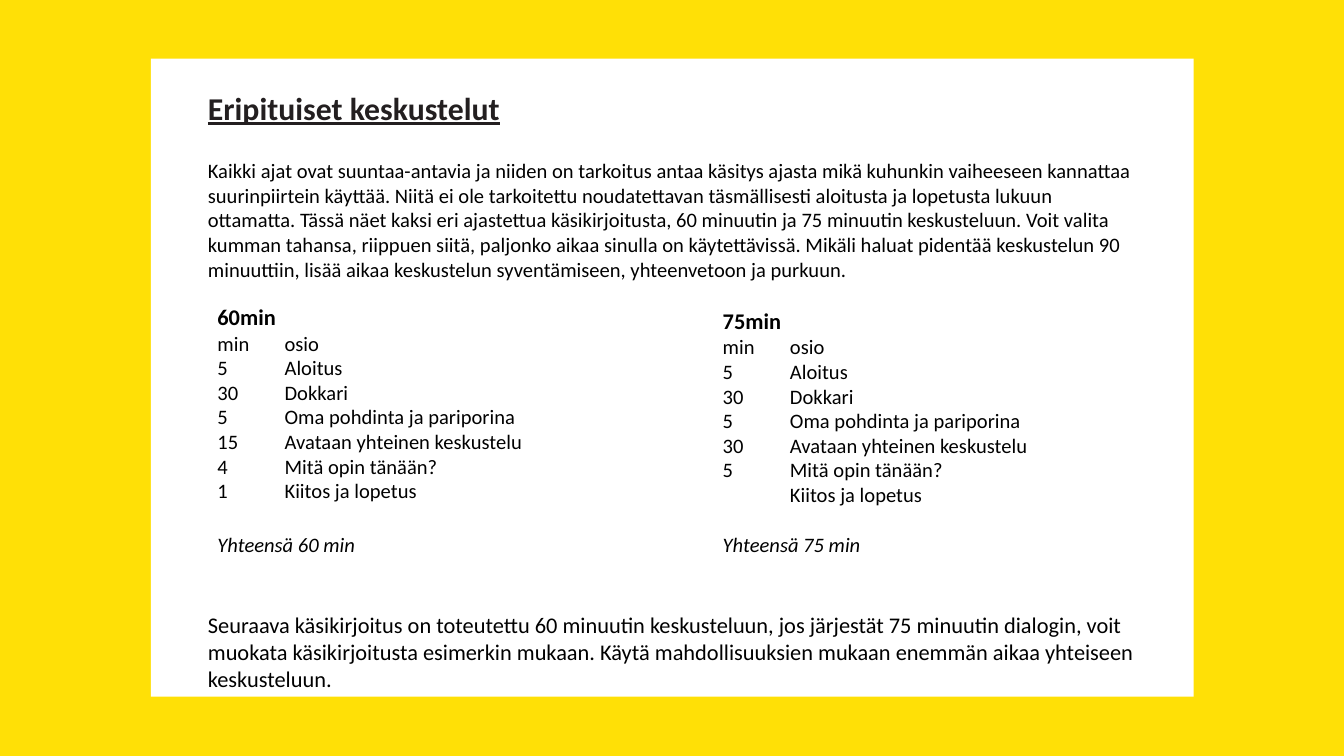
from pptx import Presentation
from pptx.dml.color import RGBColor
from pptx.enum.shapes import MSO_SHAPE
from pptx.util import Cm, Pt

YELLOW = RGBColor(0xFF, 0xE0, 0x06)
WHITE = RGBColor(0xFF, 0xFF, 0xFF)
BLACK = RGBColor(0x00, 0x00, 0x00)
CHARCOAL = RGBColor(0x23, 0x1F, 0x20)
FONT = "Calibri"

TITLE = "Eripituiset keskustelut"
INTRO = (
    "Kaikki ajat ovat suuntaa-antavia ja niiden on tarkoitus antaa käsitys ajasta "
    "mikä kuhunkin vaiheeseen kannattaa suurinpiirtein käyttää. Niitä ei ole "
    "tarkoitettu noudatettavan täsmällisesti aloitusta ja lopetusta lukuun ottamatta. "
    "Tässä näet kaksi eri ajastettua käsikirjoitusta, 60 minuutin ja 75 minuutin "
    "keskusteluun. Voit valita kumman tahansa, riippuen siitä, paljonko aikaa sinulla "
    "on käytettävissä. Mikäli haluat pidentää keskustelun 90 minuuttiin, lisää aikaa "
    "keskustelun syventämiseen, yhteenvetoon ja purkuun."
)
CLOSING = (
    "Seuraava käsikirjoitus on toteutettu 60 minuutin keskusteluun, jos järjestät "
    "75 minuutin dialogin, voit muokata käsikirjoitusta esimerkin mukaan. Käytä "
    "mahdollisuuksien mukaan enemmän aikaa yhteiseen keskusteluun."
)
SECTIONS = [
    "Aloitus",
    "Dokkari",
    "Oma pohdinta ja pariporina",
    "Avataan yhteinen keskustelu",
    "Mitä opin tänään?",
    "Kiitos ja lopetus",
]


def add_panel(slide, box, color):
    shape = slide.shapes.add_shape(MSO_SHAPE.RECTANGLE, *map(Cm, box))
    shape.shadow.inherit = False
    shape.fill.solid()
    shape.fill.fore_color.rgb = color
    shape.line.fill.background()


def add_text(slide, box, lines):
    """Place a text box with one paragraph per line and return the paragraphs."""
    text_frame = slide.shapes.add_textbox(*map(Cm, box)).text_frame
    text_frame.word_wrap = True
    text_frame.margin_left = text_frame.margin_right = Cm(0.4)
    text_frame.margin_top = text_frame.margin_bottom = Cm(0.2)
    text_frame.text = "\n".join(lines)
    for paragraph in text_frame.paragraphs:
        format_runs(paragraph, 11)
    return text_frame.paragraphs


def format_runs(paragraph, size, color=BLACK, bold=False, italic=False, underline=False):
    for run in paragraph.runs:
        font = run.font
        font.name = FONT
        font.size = Pt(size)
        font.color.rgb = color
        font.bold = bold
        font.italic = italic
        font.underline = underline


def add_introduction(slide, box):
    title, _ = add_text(slide, box, [TITLE, INTRO])
    format_runs(title, 17, CHARCOAL, bold=True, underline=True)
    title.line_spacing = 1.15
    title.space_after = Pt(16.8)


def add_schedule(slide, box, total, minutes, total_gap):
    rows = [f"{minute}\t{section}" for minute, section in zip(minutes, SECTIONS)]
    lines = [f"{total}min", "min\tosio", *rows, f"Yhteensä {total} min"]
    paragraphs = add_text(slide, box, lines)
    format_runs(paragraphs[0], 12, bold=True)
    format_runs(paragraphs[-1], 11, italic=True)
    paragraphs[-1].space_before = Pt(total_gap)


def add_closing(slide, box):
    (paragraph,) = add_text(slide, box, [CLOSING])
    format_runs(paragraph, 12)


def main():
    presentation = Presentation()
    presentation.slide_width = Cm(25.4)
    presentation.slide_height = Cm(14.29)
    slide = presentation.slides.add_slide(presentation.slide_layouts[6])

    # Yellow frame and white page
    add_panel(slide, (0, 0, 25.4, 14.29), YELLOW)
    add_panel(slide, (2.85, 1.11, 19.71, 12.06), WHITE)

    # Introduction, the two schedules and the closing note
    add_introduction(slide, (3.53, 1.37, 18.36, 4.6))
    add_schedule(slide, (3.71, 5.54, 12.37, 11.96), 60, [5, 30, 5, 15, 4, 1], 15.4)
    add_schedule(slide, (13.26, 5.61, 8.23, 11.96), 75, [5, 30, 5, 30, 5, ""], 13.4)
    add_closing(slide, (3.53, 11.35, 18.36, 11.96))

    presentation.save("out.pptx")


if __name__ == "__main__":
    main()
